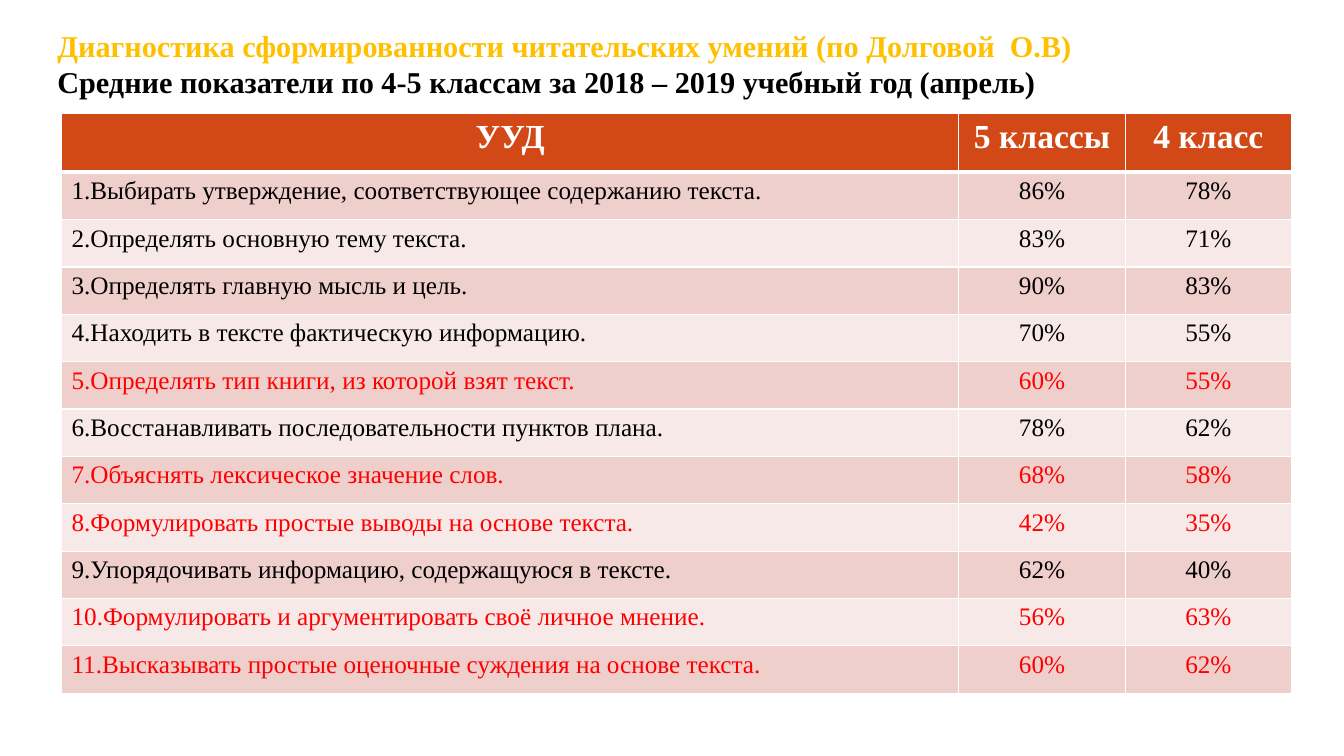
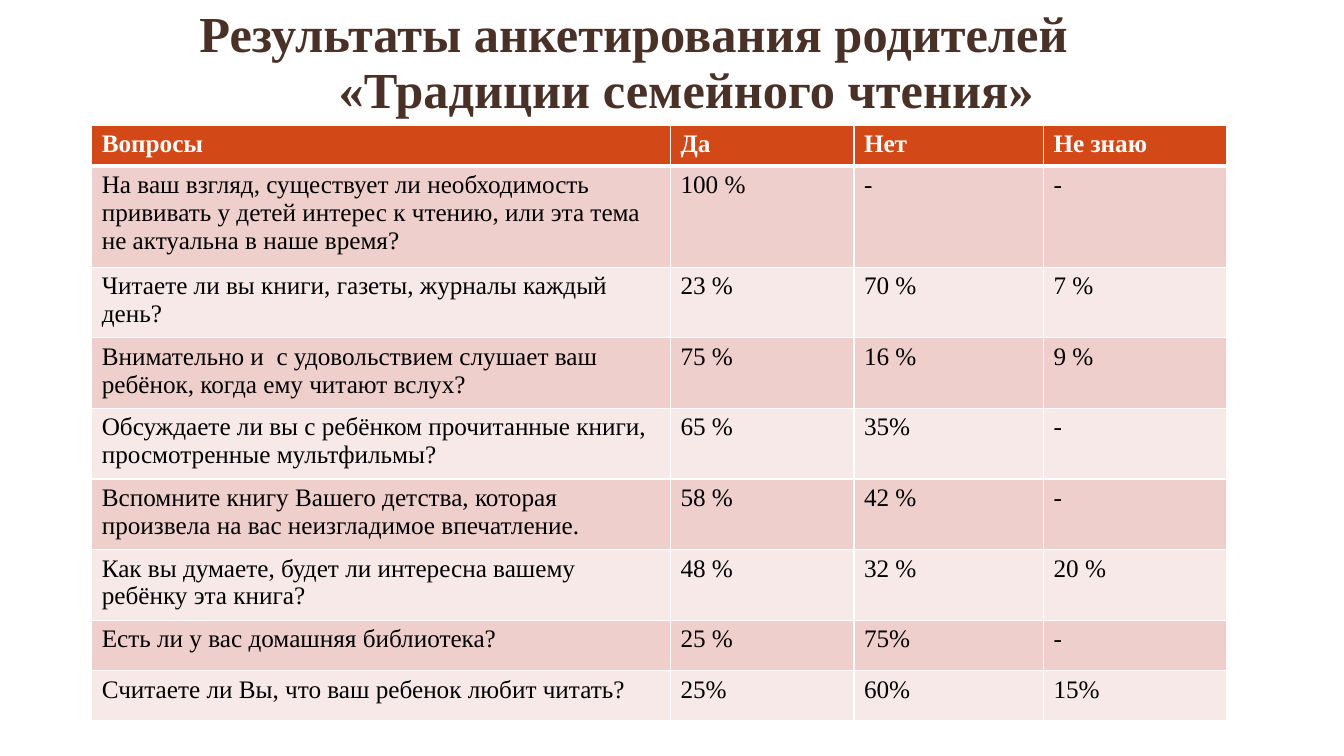
from dataclasses import dataclass

from lxml.etree import SubElement
from pptx import Presentation
from pptx.dml.color import RGBColor
from pptx.enum.text import MSO_ANCHOR, PP_ALIGN
from pptx.oxml.ns import qn
from pptx.util import Pt

SCALE = 9144  # EMU in one px, 100 px to the inch


def px(n):
    return n * SCALE


@dataclass(frozen=True)
class Theme:
    font: str = "Times New Roman"
    white: str = "FFFFFF"
    black: str = "000000"
    gold: str = "FFC000"
    brown: str = "4A3128"
    red: str = "FF0000"
    header: str = "D34817"
    bands: tuple = ("EFCFCC", "F7E9E8")
    title_size: float = 36
    subtitle_size: float = 21.6
    header_size: float = 24
    body_size: float = 18
    thin: float = 1
    thick: float = 3


THEME = Theme()


class Deck:
    """Holds the style and the slide being built."""

    def __init__(self, theme):
        self.theme = theme
        self.prs = Presentation()
        self.prs.slide_width, self.prs.slide_height = px(1333), px(750)
        self.s = None

    def new_slide(self):
        self.s = self.prs.slides.add_slide(self.prs.slide_layouts[6])

    def style(self, p, size, color, bold=False):
        p.font.name, p.font.size, p.font.bold = self.theme.font, Pt(size), bold
        p.font.color.rgb = RGBColor.from_string(color)

    def title(self, box, lines, size, spacing):
        """Each line is (text, colour, indent in px)."""
        tf = self.s.shapes.add_textbox(*map(px, box)).text_frame
        tf.word_wrap = True
        tf.vertical_anchor = MSO_ANCHOR.MIDDLE
        for i, (text, color, indent) in enumerate(lines):
            p = tf.add_paragraph() if i else tf.paragraphs[0]
            p.text = text
            p.line_spacing = Pt(spacing)
            if indent:
                p._p.get_or_add_pPr().set("marL", str(px(indent)))
            self.style(p, size, color, bold=True)

    def borders(self, cell, top, bottom):
        thin = self.theme.thin
        tcPr = cell._tc.get_or_add_tcPr()
        for side, width in zip("LRTB", (thin, thin, top, bottom)):
            ln = SubElement(tcPr, qn(f"a:ln{side}"), w=str(Pt(width)))
            fill = SubElement(ln, qn("a:solidFill"))
            SubElement(fill, qn("a:srgbClr"), val=self.theme.white)

    def table(self, left, top, cols, heights, rows, header_size,
              centred=(), marked=()):
        """The first row is the header; marked rows have red text."""
        th = self.theme
        frame = self.s.shapes.add_table(
            len(rows), len(cols), px(left), px(top),
            px(sum(cols)), px(sum(heights)))
        table = frame.table
        for col, width in zip(table.columns, cols):
            col.width = px(width)
        for i, (row, height) in enumerate(zip(rows, heights)):
            table.rows[i].height = px(height)
            is_header = i == 0
            if is_header:
                size, color, fill = header_size, th.white, th.header
            else:
                size, fill = th.body_size, th.bands[(i - 1) % 2]
                color = th.red if i in marked else th.black
            for j, text in enumerate(row):
                cell = table.cell(i, j)
                self.borders(cell, th.thick if i == 1 else th.thin,
                             th.thick if is_header else th.thin)
                cell.fill.solid()
                cell.fill.fore_color.rgb = RGBColor.from_string(fill)
                p = cell.text_frame.paragraphs[0]
                p.text = text
                if j in centred or (is_header and centred):
                    p.alignment = PP_ALIGN.CENTER
                self.style(p, size, color, bold=is_header)


SKILLS = [
    ("УУД", "5 классы", "4 класс"),
    ("1.Выбирать утверждение, соответствующее содержанию текста.", "86%", "78%"),
    ("2.Определять основную тему текста.", "83%", "71%"),
    ("3.Определять главную мысль и цель.", "90%", "83%"),
    ("4.Находить в тексте фактическую информацию.", "70%", "55%"),
    ("5.Определять тип книги, из которой взят текст.", "60%", "55%"),
    ("6.Восстанавливать последовательности пунктов плана.", "78%", "62%"),
    ("7.Объяснять лексическое значение слов.", "68%", "58%"),
    ("8.Формулировать простые выводы на основе текста.", "42%", "35%"),
    ("9.Упорядочивать информацию, содержащуюся в тексте.", "62%", "40%"),
    ("10.Формулировать и аргументировать своё личное мнение.", "56%", "63%"),
    ("11.Высказывать простые оценочные суждения на основе текста.", "60%", "62%"),
]

SURVEY = [
    ("Вопросы", "Да", "Нет", "Не знаю"),
    ("На ваш взгляд, существует ли необходимость прививать у детей интерес "
     "к чтению, или эта тема не актуальна в наше время?", "100 %", "-", "-"),
    ("Читаете ли вы книги, газеты, журналы каждый день?", "23 %", "70 %", "7 %"),
    ("Внимательно и  с удовольствием слушает ваш ребёнок, когда ему читают "
     "вслух?", "75 %", "16 %", "9 %"),
    ("Обсуждаете ли вы с ребёнком прочитанные книги, просмотренные "
     "мультфильмы?", "65 %", "35%", "-"),
    ("Вспомните книгу Вашего детства, которая произвела на вас неизгладимое "
     "впечатление.", "58 %", "42 %", "-"),
    ("Как вы думаете, будет ли интересна вашему ребёнку эта книга?",
     "48 %", "32 %", "20 %"),
    ("Есть ли у вас домашняя библиотека?", "25 %", "75%", "-"),
    ("Считаете ли Вы, что ваш ребенок любит читать?", "25%", "60%", "15%"),
]


def main():
    deck = Deck(THEME)

    # Reading skills by class
    deck.new_slide()
    deck.title((47, 16, 1139, 95), [
        ("Диагностика сформированности читательских умений (по Долговой  О.В)",
         THEME.gold, 0),
        ("Средние показатели по 4-5 классам за 2018 – 2019 учебный год (апрель)",
         THEME.black, 0),
    ], THEME.subtitle_size, 25.5)
    deck.table(61, 113, [890, 165, 165], [58] + [47] * 11, SKILLS,
               THEME.header_size, centred=(1, 2), marked=(5, 7, 8, 10, 11))

    # Survey of parents
    deck.new_slide()
    deck.title((188, 31, 1077, 63), [
        ("Результаты анкетирования родителей", THEME.brown, 0),
        ("«Традиции семейного чтения»", THEME.brown, 138),
    ], THEME.title_size, 40)
    deck.table(91, 124, [574, 182, 188, 182], [41, 100] + [65] * 5 + [50] * 2,
               SURVEY, THEME.body_size)

    deck.prs.save("out.pptx")


if __name__ == "__main__":
    main()
